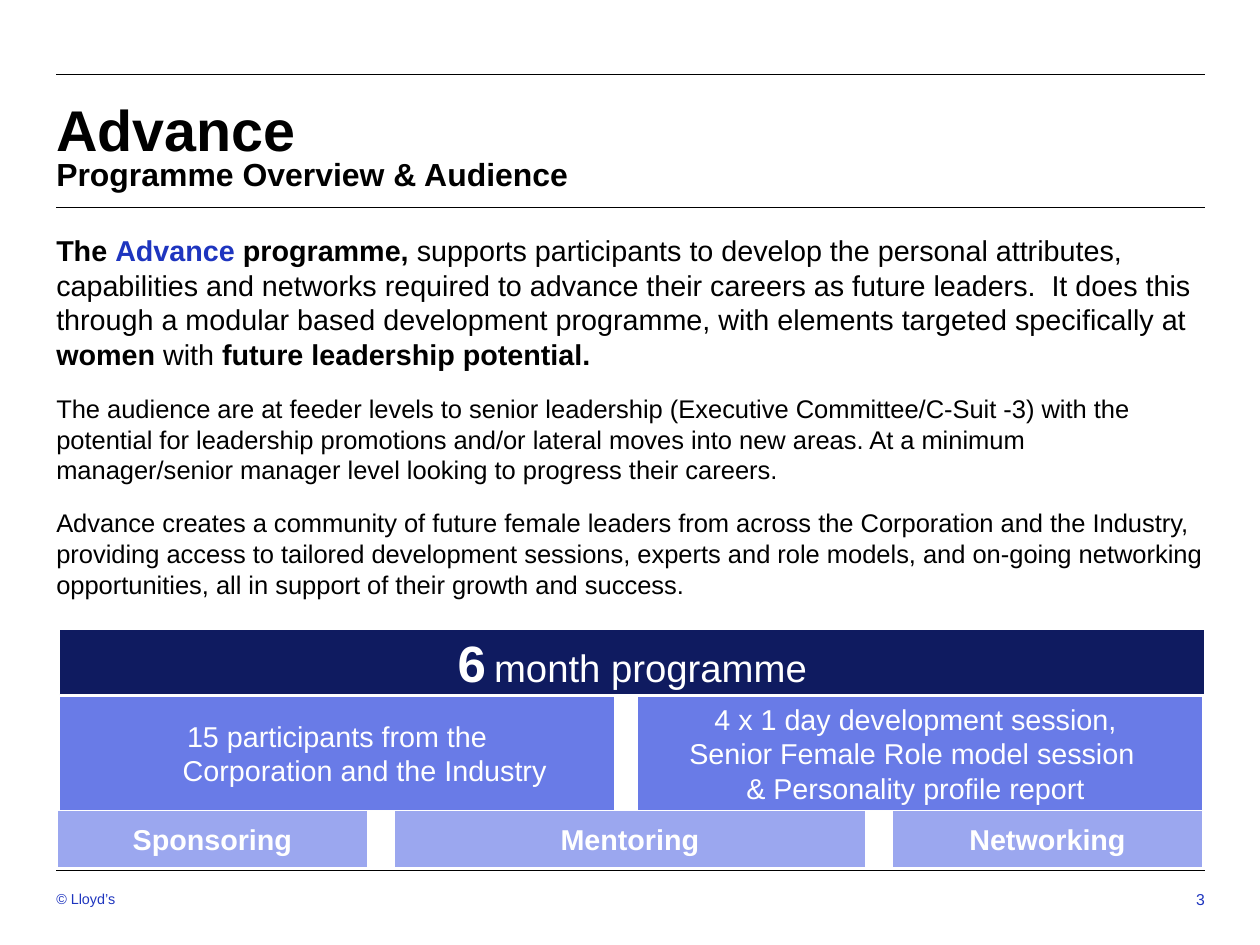
from pptx import Presentation
from pptx.dml.color import RGBColor
from pptx.enum.shapes import MSO_CONNECTOR, MSO_SHAPE
from pptx.enum.text import MSO_ANCHOR, PP_ALIGN
from pptx.oxml.ns import qn
from pptx.util import Inches, Pt
from lxml import etree

LEFT, CENTER, RIGHT = PP_ALIGN.LEFT, PP_ALIGN.CENTER, PP_ALIGN.RIGHT
TOP, MIDDLE = MSO_ANCHOR.TOP, MSO_ANCHOR.MIDDLE
RECTANGLE, STRAIGHT = MSO_SHAPE.RECTANGLE, MSO_CONNECTOR.STRAIGHT

COLOURS = {
    "black": "000000",
    "white": "FFFFFF",
    "blue": "1E35BF",
    "navy": "0F1B60",
    "mid": "697BE7",
    "pale": "9BA7EF",
}
MARGIN, CONTENT_WIDTH = 0.49, 10


class SlideBuilder:
    """Holds the slide and its style, and draws each kind of element."""

    def __init__(self, slide, font="Arial"):
        self.slide = slide
        self.font = font

    def colour(self, name):
        return RGBColor.from_string(COLOURS[name])

    def rule(self, y):
        line = self.slide.shapes.add_connector(
            STRAIGHT, Inches(MARGIN), Inches(y), Inches(MARGIN + CONTENT_WIDTH), Inches(y))
        line.line.color.rgb = self.colour("black")
        line.line.width = Pt(0.5)
        etree.SubElement(line._element.spPr, qn("a:effectLst"))

    def paragraph(self, frame, index, runs, align, colour):
        paragraph = frame.paragraphs[0] if index == 0 else frame.add_paragraph()
        paragraph.alignment = align
        for text, size, bold, *own_colour in runs:
            run = paragraph.add_run()
            run.text = text
            run.font.name = self.font
            run.font.size = Pt(size)
            run.font.bold = bold
            run.font.color.rgb = self.colour(own_colour[0] if own_colour else colour)
        return paragraph

    def text(self, box, paragraphs, insets=(0, 0), anchor=TOP, align=LEFT,
             colour="black", spacing=1.0):
        frame = self.slide.shapes.add_textbox(*map(Inches, box)).text_frame
        frame.word_wrap = True
        frame.vertical_anchor = anchor
        frame.margin_left = frame.margin_right = 0
        frame.margin_top, frame.margin_bottom = map(Inches, insets)
        for index, runs in enumerate(paragraphs):
            paragraph = self.paragraph(frame, index, runs, align, colour)
            paragraph.line_spacing = spacing
            if len(paragraphs) > 1:
                paragraph.space_before = Pt(10 if index else 0)
                paragraph.space_after = Pt(4)

    def block(self, box, fill, lines, shifts=()):
        shape = self.slide.shapes.add_shape(RECTANGLE, *map(Inches, box))
        shape.shadow.inherit = False
        shape.fill.solid()
        shape.fill.fore_color.rgb = self.colour(fill)
        shape.line.color.rgb = self.colour("white")
        shape.line.width = Pt(1)
        frame = shape.text_frame
        frame.word_wrap = True
        frame.vertical_anchor = MIDDLE
        for index, runs in enumerate(lines):
            paragraph = self.paragraph(frame, index, runs, CENTER, "white")
            if shifts:
                side = "marL" if shifts[index] > 0 else "marR"
                paragraph._p.get_or_add_pPr().set(side, str(Inches(2 * abs(shifts[index]))))


def main():
    presentation = Presentation()
    presentation.slide_width, presentation.slide_height = Inches(10.97), Inches(8.23)
    page = SlideBuilder(presentation.slides.add_slide(presentation.slide_layouts[6]))

    for y in (0.65, 1.81, 7.58):
        page.rule(y)

    page.text((MARGIN, 0.65, CONTENT_WIDTH, 1.17), [[("Advance", 36, True)]],
              insets=(0.24, 0.08), spacing=0.9)
    page.text((MARGIN, 1.31, CONTENT_WIDTH, 0.51),
              [[("Programme Overview & Audience", 20, True)]], insets=(0.04, 0))

    overview = [
        ("The ", 18, True),
        ("Advance ", 18, True, "blue"),
        ("programme, ", 18, True),
        ("supports participants to develop the personal attributes, capabilities and "
         "networks required to advance their careers as future leaders.  It does this "
         "through a modular based development programme, with elements targeted "
         "specifically at ", 18, False),
        ("women", 18, True),
        (" with ", 18, False),
        ("future leadership potential.", 18, True),
    ]
    audience = [(
        "The audience are at feeder levels to senior leadership (Executive "
        "Committee/C-Suit -3) with the potential for leadership promotions and/or "
        "lateral moves into new areas. At a minimum manager/senior manager level "
        "looking to progress their careers.", 16, False)]
    community = [(
        "Advance creates a community of future female leaders from across the "
        "Corporation and the Industry, providing access to tailored development "
        "sessions, experts and role models, and on-going networking opportunities, "
        "all in support of their growth and success.", 16, False)]
    page.text((MARGIN, 2.03, CONTENT_WIDTH, 3.23), [overview, audience, community])

    page.block((0.52, 5.48, 9.97, 0.57), "navy",
               [[("6", 32, True), (" ", 18, False), ("month programme", 24, False)]])

    details = [
        (0.52, 4.83, ("15 participants from the", "Corporation and the Industry"),
         (0, 0.24)),
        (5.55, 4.92, ("4 x 1 day development session,",
                      "Senior Female Role model session",
                      "& Personality profile report"), (-0.04, -0.07, 0.03)),
    ]
    for left, width, lines, shifts in details:
        page.block((left, 6.06, width, 1), "mid",
                   [[(line, 18, False)] for line in lines], shifts)

    supports = [("Sponsoring", 0.5, 2.7), ("Mentoring", 3.43, 4.11), ("Networking", 7.77, 2.7)]
    for label, left, width in supports:
        page.block((left, 7.06, width, 0.5), "pale", [[(label, 18, True)]])

    page.text((MARGIN, 7.7, 3.7, 0.25), [[("© Lloyd’s", 9, False)]],
              insets=(0.05, 0.05), anchor=MIDDLE, colour="blue")
    page.text((8.02, 7.68, 2.47, 0.3), [[("3", 9.9, False)]],
              insets=(0.04, 0.04), anchor=MIDDLE, align=RIGHT, colour="blue")

    presentation.save("out.pptx")


if __name__ == "__main__":
    main()
